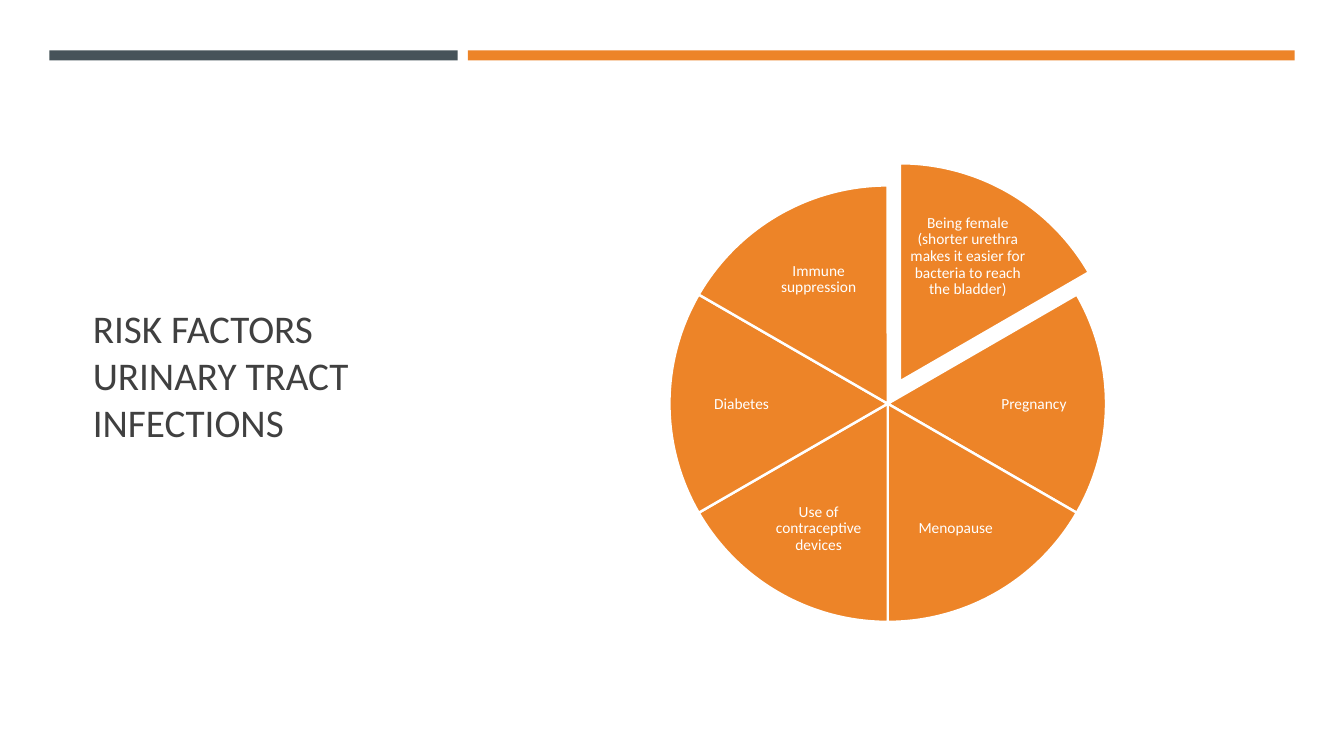
from pptx import Presentation
from pptx.dml.color import RGBColor
from pptx.enum.shapes import MSO_SHAPE
from pptx.enum.text import MSO_ANCHOR, MSO_AUTO_SIZE, PP_ALIGN
from pptx.util import Inches, Pt

RECTANGLE, PIE = MSO_SHAPE.RECTANGLE, MSO_SHAPE.PIE
MIDDLE = MSO_ANCHOR.MIDDLE
LEFT, CENTER = PP_ALIGN.LEFT, PP_ALIGN.CENTER
NO_AUTOFIT = MSO_AUTO_SIZE.NONE

ORANGE, SLATE, WHITE, DARK_GREY = "ED8428", "465359", "FFFFFF", "404040"

# Pie angles in the units of shape.adjustments: a full turn is 216
FULL_TURN = 216
SLICE_TURN = FULL_TURN / 6
TOP = 162
DIAMETER = 4.33


def add_filled(shapes, kind, place, color):
    shape = shapes.add_shape(kind, *map(Inches, place))
    shape.shadow.inherit = False
    shape.fill.solid()
    shape.fill.fore_color.rgb = RGBColor.from_string(color)
    shape.line.fill.background()
    return shape


def write(box, text, size, color, align):
    frame = box.text_frame
    settings = {"word_wrap": True, "auto_size": NO_AUTOFIT, "vertical_anchor": MIDDLE}
    for name, value in settings.items():
        setattr(frame, name, value)
    para = frame.paragraphs[0]
    para.alignment = align
    span = para.add_run()
    span.text = text
    for name, value in {"name": "Calibri", "size": Pt(size)}.items():
        setattr(span.font, name, value)
    span.font.color.rgb = RGBColor.from_string(color)


deck = Presentation()
deck.slide_width, deck.slide_height = Inches(13.33), Inches(7.5)
page = deck.slides.add_slide(deck.slide_layouts[5])

# Title
title = page.shapes.title
title.left, title.top = Inches(0.82), Inches(1.14)
title.width, title.height = Inches(3.34), Inches(5.15)
write(title, "RISK FACTORS URINARY TRACT INFECTIONS", 28, DARK_GREY, LEFT)

# Bars along the top
for left, width, color in [(0.49, 4.05, SLATE), (4.64, 8.2, ORANGE)]:
    add_filled(page.shapes, RECTANGLE, (left, 0.5, width, 0.1), color)

# Risk factors, clockwise from the top: text, slice corner, label place
wheel = (6.64, 1.84)
pulled_out = (6.76, 1.62)
factors = [
    ("Being female (shorter urethra makes it easier for bacteria to reach the bladder)",
     pulled_out, (8.97, 2.08, 1.26, 0.93)),
    ("Pregnancy", wheel, (9.6, 3.57, 1.31, 0.88)),
    ("Menopause", wheel, (8.85, 4.78, 1.26, 0.93)),
    ("Use of contraceptive devices", wheel, (7.49, 4.78, 1.26, 0.93)),
    ("Diabetes", wheel, (6.7, 3.57, 1.31, 0.88)),
    ("Immune suppression", wheel, (7.49, 2.31, 1.26, 0.93)),
]
pie = page.shapes.add_group_shape()
for index, (factor, corner, place) in enumerate(factors):
    piece = add_filled(pie.shapes, PIE, (*corner, DIAMETER, DIAMETER), ORANGE)
    start = TOP + index * SLICE_TURN
    piece.adjustments[0] = start % FULL_TURN
    piece.adjustments[1] = (start + SLICE_TURN) % FULL_TURN
    piece.line.color.rgb = RGBColor.from_string(WHITE)
    piece.line.width = Pt(1.75)

    label = pie.shapes.add_textbox(*map(Inches, place))
    for side in ("left", "top", "right", "bottom"):
        setattr(label.text_frame, f"margin_{side}", Inches(0.02))
    write(label, factor, 11, WHITE, CENTER)
    label.text_frame.paragraphs[0].line_spacing = 0.9

deck.save("out.pptx")
